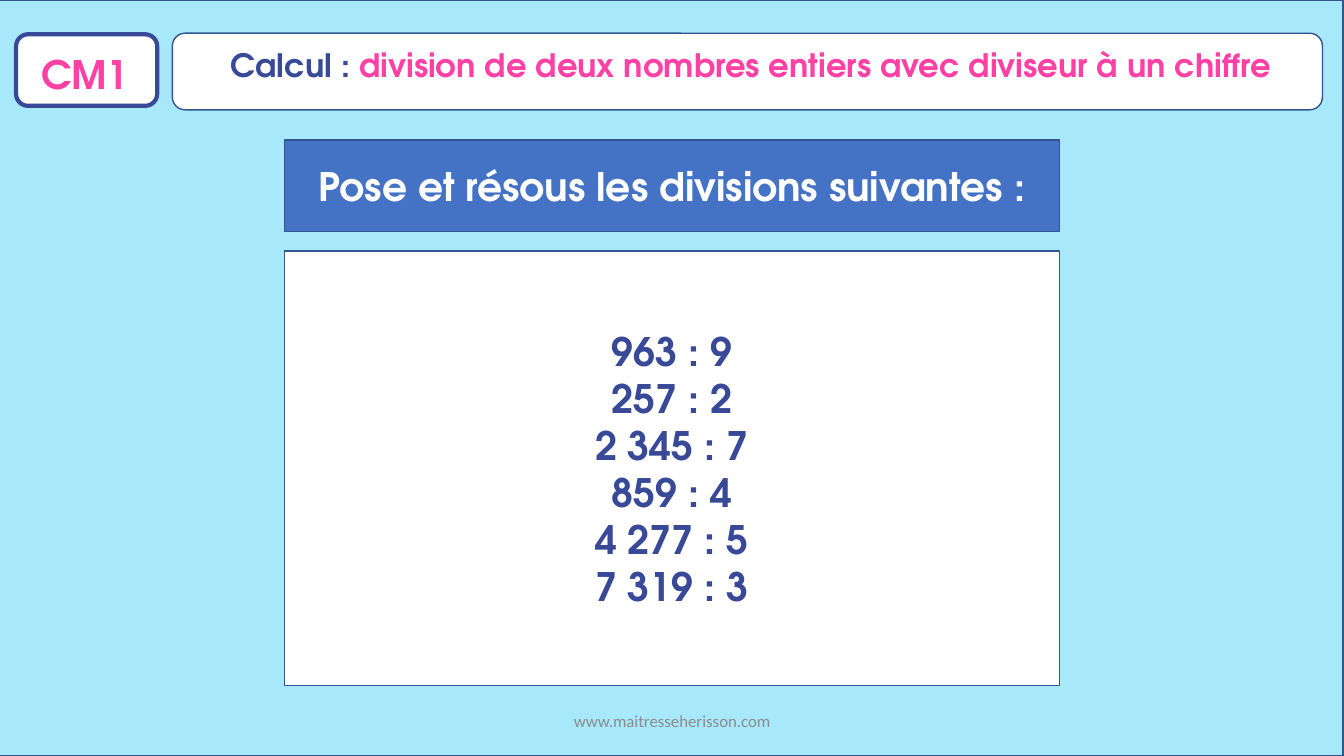
from dataclasses import dataclass

from pptx import Presentation
from pptx.dml.color import RGBColor
from pptx.enum.shapes import MSO_SHAPE
from pptx.enum.text import MSO_ANCHOR, PP_ALIGN
from pptx.slide import Slide
from pptx.text.text import TextFrame
from pptx.util import Pt

WHITE = RGBColor(0xFF, 0xFF, 0xFF)
SKY = RGBColor(0xA7, 0xE8, 0xFB)
BLUE = RGBColor(0x44, 0x72, 0xC4)
OUTLINE = RGBColor(0x32, 0x54, 0x91)
NAVY = RGBColor(0x37, 0x49, 0x97)
PINK = RGBColor(0xFF, 0x41, 0xA5)
GREY = RGBColor(0x8C, 0x8C, 0x8C)
HEADING_FONT = "TeX Gyre Adventor"

PANEL_LEFT = 203.04
PANEL_WIDTH = 553.68


@dataclass(frozen=True)
class Box:
    left: float
    top: float
    width: float
    height: float


@dataclass(frozen=True)
class Panel:
    box: Box
    fill: RGBColor
    line: RGBColor = OUTLINE
    line_width: float = 1
    preset: MSO_SHAPE = MSO_SHAPE.RECTANGLE
    lines: tuple[str, ...] = ()
    text_color: RGBColor = NAVY


@dataclass(frozen=True)
class Label:
    box: Box
    phrases: tuple[tuple[str, RGBColor], ...]
    size: float
    font: str = HEADING_FONT
    bold: bool = True
    alignment: PP_ALIGN = PP_ALIGN.CENTER
    anchor: MSO_ANCHOR = MSO_ANCHOR.TOP


PANELS = (
    Panel(Box(-0.72, 0, 960, 540), SKY),
    Panel(Box(11.52, 24.48, 100.8, 51.12), WHITE, NAVY, 3, MSO_SHAPE.ROUNDED_RECTANGLE),
    Panel(Box(123.12, 23.76, 821.52, 54.72), WHITE, preset=MSO_SHAPE.ROUNDED_RECTANGLE),
    Panel(
        Box(PANEL_LEFT, 179.28, PANEL_WIDTH, 310.32),
        WHITE,
        lines=("963 : 9", "257 : 2", "2 345 : 7", "859 : 4", "4 277 : 5", "7 319 : 3"),
    ),
    Panel(
        Box(PANEL_LEFT, 100.08, PANEL_WIDTH, 65.52),
        BLUE,
        lines=("Pose et résous les divisions suivantes :",),
        text_color=WHITE,
    ),
)

LABELS = (
    Label(Box(22.32, 32.4, 77.76, 41.04), (("CM1", PINK),), 28, alignment=PP_ALIGN.LEFT),
    Label(
        Box(128.88, 28.8, 815.76, 35.28),
        (
            ("Calcul : ", NAVY),
            ("division de deux nombres entiers avec diviseur à un chiffre", PINK),
        ),
        23,
    ),
    Label(
        Box(318.24, 500.4, 324, 28.8),
        (("www.maitresseherisson.com", GREY),),
        12,
        font="Calibri",
        bold=False,
        anchor=MSO_ANCHOR.MIDDLE,
    ),
)


def place(box: Box) -> tuple[Pt, Pt, Pt, Pt]:
    return Pt(box.left), Pt(box.top), Pt(box.width), Pt(box.height)


def write_lines(text_frame: TextFrame, panel: Panel) -> None:
    text_frame.word_wrap = True
    text_frame.vertical_anchor = MSO_ANCHOR.MIDDLE
    text_frame.text = "\n".join(panel.lines)
    for paragraph in text_frame.paragraphs:
        paragraph.alignment = PP_ALIGN.CENTER
        for run in paragraph.runs:
            run.font.name = HEADING_FONT
            run.font.size = Pt(28)
            run.font.bold = True
            run.font.color.rgb = panel.text_color


def draw_panel(slide: Slide, panel: Panel) -> None:
    shape = slide.shapes.add_shape(panel.preset, *place(panel.box))
    shape.shadow.inherit = False
    shape.fill.solid()
    shape.fill.fore_color.rgb = panel.fill
    shape.line.color.rgb = panel.line
    shape.line.width = Pt(panel.line_width)
    if panel.lines:
        write_lines(shape.text_frame, panel)


def draw_label(slide: Slide, label: Label) -> None:
    text_frame = slide.shapes.add_textbox(*place(label.box)).text_frame
    text_frame.word_wrap = True
    text_frame.vertical_anchor = label.anchor
    paragraph = text_frame.paragraphs[0]
    paragraph.alignment = label.alignment
    for text, color in label.phrases:
        run = paragraph.add_run()
        run.text = text
        run.font.name = label.font
        run.font.size = Pt(label.size)
        run.font.bold = label.bold
        run.font.color.rgb = color


def main() -> None:
    presentation = Presentation()
    presentation.slide_width = Pt(960)
    presentation.slide_height = Pt(540)
    slide = presentation.slides.add_slide(presentation.slide_layouts[6])
    for panel in PANELS:
        draw_panel(slide, panel)
    for label in LABELS:
        draw_label(slide, label)
    presentation.save("out.pptx")


if __name__ == "__main__":
    main()
